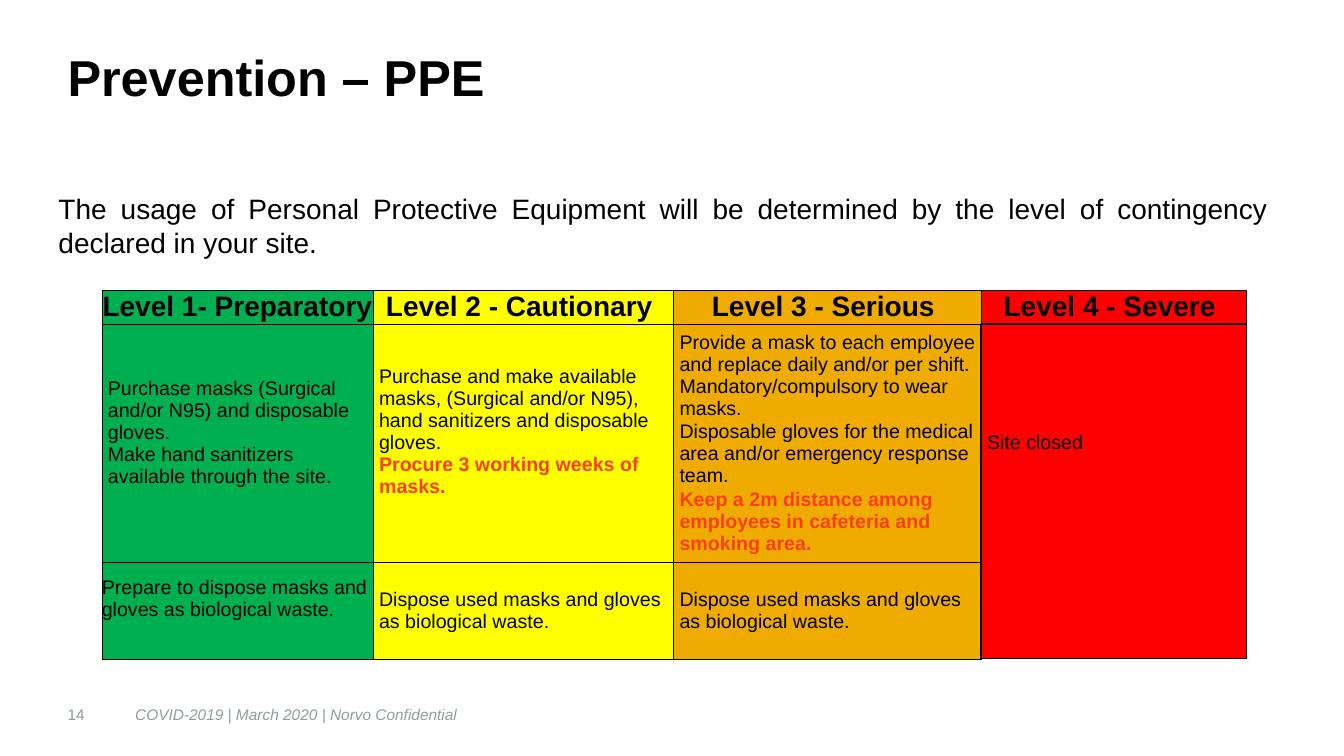
from dataclasses import dataclass

import pptx
import pptx.dml.color
import pptx.enum.text
import pptx.oxml
import pptx.oxml.ns
import pptx.util
from pptx.util import Inches

COLORS = {"text": "000000", "alert": "F74018", "footer": "929D96"}
ALIGN = pptx.enum.text.PP_ALIGN
ANCHOR = pptx.enum.text.MSO_ANCHOR
INDENT = 0.06


@dataclass
class Item:
    text: str
    alert: bool = False


@dataclass
class Entry:
    items: list[Item]
    indent: float = INDENT
    after: float = 0
    bottom: float = 0


@dataclass
class Level:
    title: str
    fill: str
    width: float
    entries: list[Entry]


DISPOSE = "Dispose used masks and gloves as biological waste."
LEVELS = [
    Level("Level 1- Preparatory ", "00B050", 2.69, [
        Entry([Item("Purchase masks (Surgical and/or N95) and disposable gloves."),
               Item("Make hand sanitizers available through the site.")], bottom=0.2),
        Entry([Item("Prepare to dispose masks and gloves as biological waste.")],
              indent=0, bottom=0.24)]),
    Level("Level 2 - Cautionary ", "FFFF00", 2.98, [
        Entry([Item("Purchase and make available masks, (Surgical and/or N95), "
                    "hand sanitizers and disposable gloves."),
               Item("Procure 3 working weeks of masks.", alert=True)], bottom=0.22),
        Entry([Item(DISPOSE)])]),
    Level("Level 3 - Serious ", "F0AB00", 3.05, [
        Entry([Item("Provide a mask to each employee and replace daily and/or per shift. "
                    "Mandatory/compulsory to wear masks."),
               Item("Disposable gloves for the medical area and/or emergency response team."),
               Item("Keep a 2m distance among employees in cafeteria and smoking area.",
                    alert=True)], after=1),
        Entry([Item(DISPOSE)])]),
    Level("Level 4 - Severe ", "FF0000", 2.63, [Entry([Item("Site closed")]), Entry([])]),
]
ROW_HEIGHTS = [0.31, 2.22, 0.96]


def write(p, text: str, *, size: float, color: str = "text", bold: bool = False,
          italic: bool = False, align=ALIGN.LEFT, indent: float = 0, after: float = 0) -> None:
    """Fill one paragraph with formatted text."""
    if indent:
        p._p.get_or_add_pPr().set("marL", str(Inches(indent)))
    p.alignment = align
    p.space_after = pptx.util.Pt(after)
    r = p.add_run()
    r.text = text
    r.font.name = "Arial"
    r.font.size = pptx.util.Pt(size)
    r.font.bold = bold
    r.font.italic = italic
    r.font.color.rgb = pptx.dml.color.RGBColor.from_string(COLORS[color])


def add_text(s, text: str, box: tuple[float, ...], *, anchor=ANCHOR.TOP,
             top: float = 0, **fmt) -> None:
    tf = s.shapes.add_textbox(*map(Inches, box)).text_frame
    tf.word_wrap = True
    tf.vertical_anchor = anchor
    tf.margin_left = tf.margin_right = tf.margin_bottom = 0
    tf.margin_top = Inches(top)
    write(tf.paragraphs[0], text, **fmt)


def set_borders(cell, widths: dict[str, float]) -> None:
    """Draw the cell sides; a zero width leaves the side open."""
    for side, width in widths.items():
        paint = (f'<a:solidFill><a:srgbClr val="{COLORS["text"]}"/></a:solidFill>'
                 if width else "<a:noFill/>")
        cell._tc.get_or_add_tcPr().append(pptx.oxml.parse_xml(
            f'<a:ln{side} {pptx.oxml.ns.nsdecls("a")} w="{pptx.util.Pt(width)}">'
            f"{paint}</a:ln{side}>"))


def border_widths(row: int, col: int) -> dict[str, float]:
    """Frame the two cells of the last level as one closed area."""
    widths = dict.fromkeys("LRTB", 0.5)
    last = len(LEVELS) - 1
    if col == last and row:
        widths = dict.fromkeys("LRTB", 1)
        widths["B" if row == 1 else "T"] = 0
    elif col == last:
        widths["B"] = 1
    elif col == last - 1 and row:
        widths["R"] = 1
    return widths


def add_levels(s) -> None:
    width = sum(level.width for level in LEVELS)
    table = s.shapes.add_table(len(ROW_HEIGHTS), len(LEVELS), Inches(1.01), Inches(2.88),
                               Inches(width), Inches(sum(ROW_HEIGHTS))).table
    table.first_row = table.horz_banding = False
    for row, height in zip(table.rows, ROW_HEIGHTS):
        row.height = Inches(height)
    for col, level in enumerate(LEVELS):
        table.columns[col].width = Inches(level.width)
        header = Entry([Item(level.title)], indent=0)
        for row, entry in enumerate([header, *level.entries]):
            cell = table.cell(row, col)
            set_borders(cell, border_widths(row, col))
            cell.fill.solid()
            cell.fill.fore_color.rgb = pptx.dml.color.RGBColor.from_string(level.fill)
            cell.vertical_anchor = ANCHOR.MIDDLE
            cell.margin_left = cell.margin_right = cell.margin_top = 0
            cell.margin_bottom = Inches(entry.bottom)
            tf = cell.text_frame
            for i, item in enumerate(entry.items):
                p = tf.add_paragraph() if i else tf.paragraphs[0]
                write(p, item.text, size=14 if row else 20, bold=item.alert or row == 0,
                      color="alert" if item.alert else "text",
                      align=ALIGN.LEFT if row else ALIGN.CENTER,
                      indent=entry.indent, after=entry.after)


def main() -> None:
    prs = pptx.Presentation()
    prs.slide_width, prs.slide_height = Inches(13.33), Inches(7.5)
    s = prs.slides.add_slide(prs.slide_layouts[6])

    # Title and introduction
    add_text(s, "Prevention – PPE", (0.67, 0.42, 12, 1.01), size=36, bold=True, top=0.04)
    add_text(s, "The usage of Personal Protective Equipment will be determined by the level "
             "of contingency declared in your site.", (0.58, 1.9, 12, 0.8),
             size=20, align=ALIGN.JUSTIFY)

    # Contingency levels
    add_levels(s)

    # Footer
    add_text(s, "14", (0.67, 6.92, 0.68, 0.33), size=11, color="footer", anchor=ANCHOR.MIDDLE)
    add_text(s, "COVID-2019 | March 2020 | Norvo Confidential", (1.34, 6.92, 3.82, 0.33),
             size=11, color="footer", italic=True, anchor=ANCHOR.MIDDLE)
    prs.save("out.pptx")


if __name__ == "__main__":
    main()
